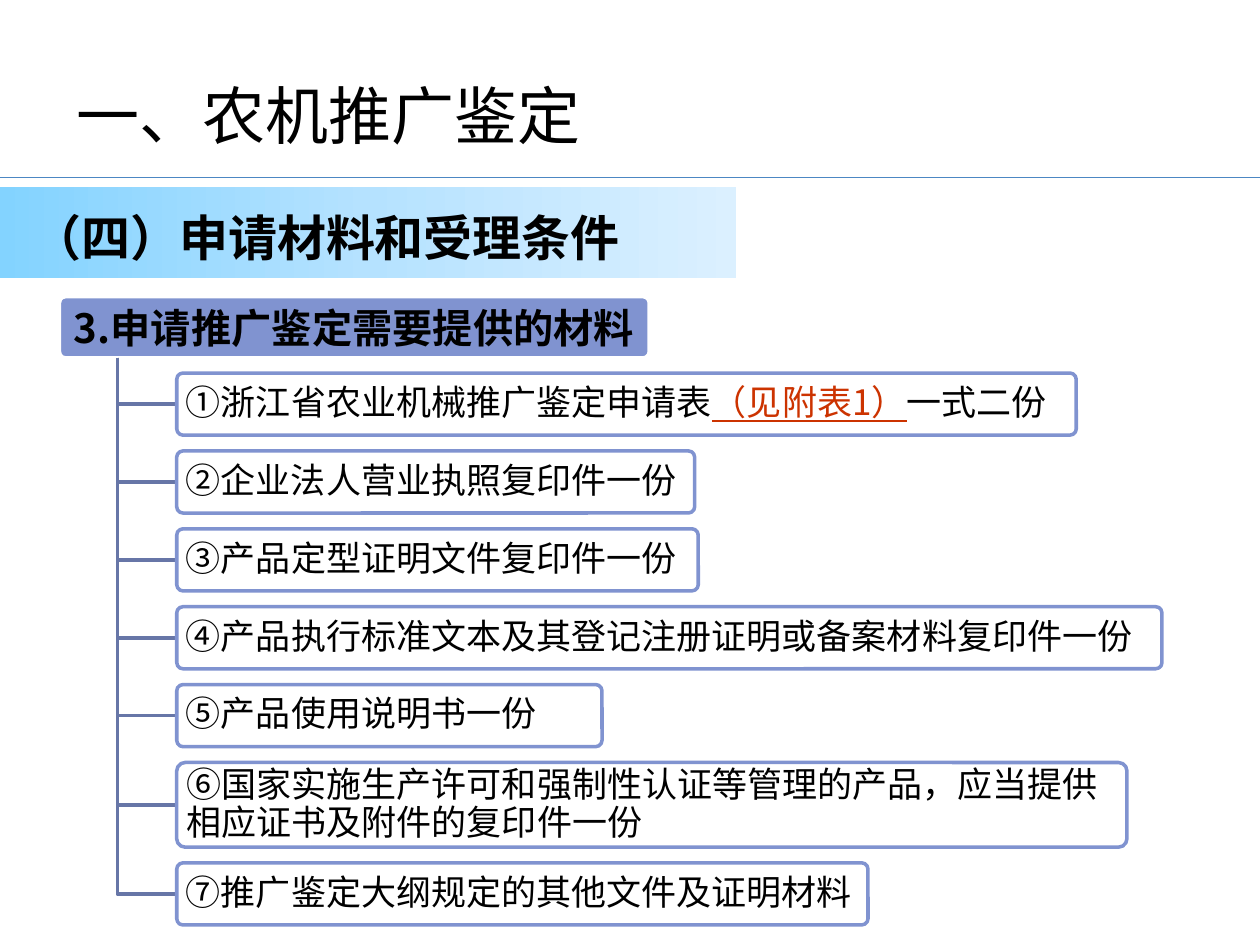
from dataclasses import dataclass
from copy import deepcopy
from lxml.etree import SubElement
from pptx import Presentation
from pptx.dml.color import RGBColor
from pptx.enum.shapes import MSO_CONNECTOR as Conn, MSO_SHAPE as Kind
from pptx.enum.text import MSO_ANCHOR as Anchor, PP_ALIGN as Align
from pptx.oxml.ns import qn
from pptx.util import Pt

FACE = "Noto Sans CJK SC"
BLACK, WHITE, RED = "000000", "FFFFFF", "CC3300"
PERI, SLATE = "8093D0", "6776A7"
TRUNK, FOOT = 67, 204.5      # where the tree leaves the heading
LEFT, TOP, GAP = 101, 213.2, 9


@dataclass
class Item:
    text: str
    width: float
    height: float = 35.5
    link: str = ""
    tail: str = ""


ITEMS = [
    Item("①浙江省农业机械推广鉴定申请表", 514, link="（见附表1）", tail="一式二份"),
    Item("②企业法人营业执照复印件一份", 296),
    Item("③产品定型证明文件复印件一份", 298),
    Item("④产品执行标准文本及其登记注册证明或备案材料复印件一份", 563),
    Item("⑤产品使用说明书一份", 243),
    Item("⑥国家实施生产许可和强制性认证等管理的产品，应当提供相应证书及附件的复印件一份",
         543, height=48.4),
    Item("⑦推广鉴定大纲规定的其他文件及证明材料", 395),
]


def rgb(code: str) -> RGBColor:
    return RGBColor.from_string(code)


def style(para, size: float, bold: bool = False) -> None:
    font = para.font
    font.size, font.bold, font.name = Pt(size), bold, FACE
    font.color.rgb = rgb(BLACK)
    SubElement(font._element, qn("a:ea"), typeface=FACE)


def outline(shape, code: str) -> None:
    shape.line.color.rgb = rgb(code)
    shape.line.width = Pt(2)
    shape.shadow.inherit = False


def add_box(shapes, x: float, y: float, w: float, h: float,
            fill: str, edge: str, inset: float):
    """Add a rounded box and return its text frame."""
    box = shapes.add_shape(Kind.ROUNDED_RECTANGLE, Pt(x), Pt(y), Pt(w), Pt(h))
    box.adjustments[0] = 0.1
    box.fill.solid()
    box.fill.fore_color.rgb = rgb(fill)
    outline(box, edge)
    frame = box.text_frame
    frame.word_wrap = True
    frame.vertical_anchor = Anchor.MIDDLE
    frame.margin_left = frame.margin_right = Pt(inset)
    frame.margin_top = frame.margin_bottom = Pt(3)
    frame.paragraphs[0].line_spacing = 0.9
    return frame


def add_branch(shapes, y: float) -> None:
    pen = shapes.build_freeform(Pt(TRUNK), Pt(FOOT))
    pen.add_line_segments([(Pt(TRUNK), Pt(y)), (Pt(LEFT), Pt(y))], close=False)
    branch = pen.convert_to_shape()
    branch.fill.background()
    outline(branch, SLATE)


def add_item(shapes, item: Item, y: float) -> None:
    add_branch(shapes, y + item.height / 2)
    frame = add_box(shapes, LEFT, y, item.width, item.height, WHITE, PERI, 4.2)
    para = frame.paragraphs[0]
    para.alignment = Align.LEFT
    style(para, 20)
    para.add_run().text = item.text
    if item.link:
        link = para.add_run()
        link.text = item.link
        link.font.underline = True
        link.font.color.rgb = rgb(RED)
        para.add_run().text = item.tail


def add_title(slide) -> None:
    title = slide.shapes.title
    title.left, title.top, title.width, title.height = Pt(-6), Pt(34), Pt(648), Pt(63)
    frame = title.text_frame
    frame.text = "一、农机推广鉴定"
    frame.margin_left = Pt(50)
    frame.vertical_anchor = Anchor.MIDDLE
    frame.paragraphs[0].alignment = Align.LEFT
    style(frame.paragraphs[0], 36)


def add_rule(shapes) -> None:
    rule = shapes.add_connector(Conn.STRAIGHT, 0, Pt(101.5), Pt(720), Pt(101.5))
    rule.line.color.rgb = rgb("4C87C3")
    rule.line.width = Pt(0.75)
    SubElement(rule._element.spPr, qn("a:effectLst"))


def add_banner(shapes) -> None:
    band = shapes.add_shape(Kind.RECTANGLE, 0, Pt(106.7), Pt(420.5), Pt(52))
    band.shadow.inherit = False
    band.line.fill.background()
    band.fill.gradient()
    band.fill.gradient_angle = 0
    first = band._element.spPr.find(".//" + qn("a:gs"))
    first.addnext(deepcopy(first))
    stops = zip(band.fill.gradient_stops, (0, 0.5, 1), ("83D3FF", "B5E2FF", "DBF0FF"))
    for stop, place, code in stops:
        stop.position = place
        stop.color.rgb = rgb(code)

    label = shapes.add_textbox(Pt(11.5), Pt(115), Pt(382), Pt(41))
    frame = label.text_frame
    frame.word_wrap = True
    frame.text = "（四）申请材料和受理条件"
    style(frame.paragraphs[0], 28, bold=True)


def main() -> None:
    deck = Presentation()
    deck.slide_width, deck.slide_height = Pt(720), Pt(540)
    slide = deck.slides.add_slide(deck.slide_layouts[5])
    shapes = slide.shapes

    # Title, rule and section banner
    add_title(slide)
    add_rule(shapes)
    add_banner(shapes)

    # Heading of the tree
    head = add_box(shapes, 34, 169.5, 337, 35, PERI, WHITE, 3.6)
    head.text = "3.申请推广鉴定需要提供的材料"
    head.paragraphs[0].alignment = Align.CENTER
    style(head.paragraphs[0], 23, bold=True)

    # Branches, stacked with equal gaps
    y = TOP
    for item in ITEMS:
        add_item(shapes, item, y)
        y += item.height + GAP

    deck.save("out.pptx")


if __name__ == "__main__":
    main()
